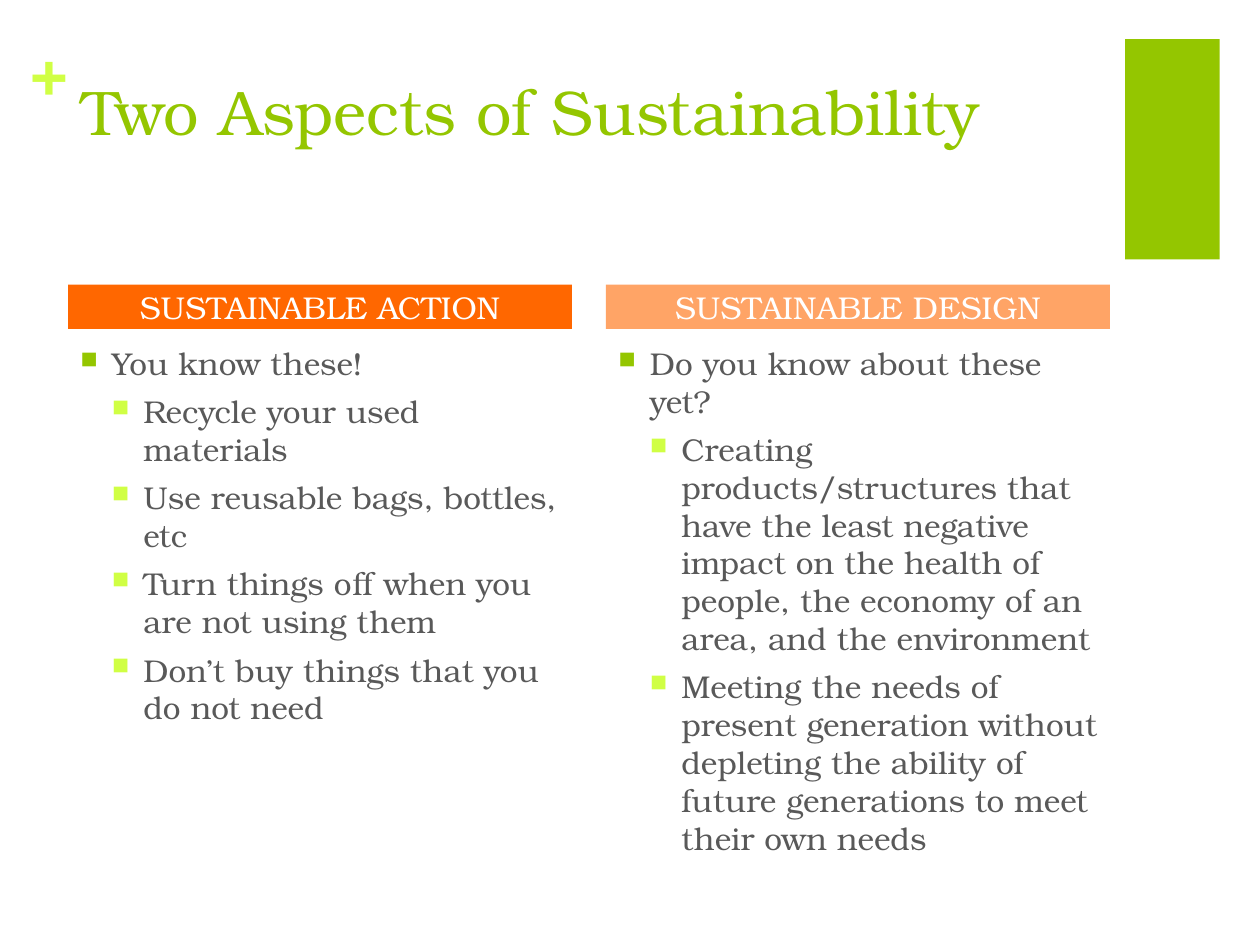
from dataclasses import dataclass

from lxml.etree import SubElement
from pptx import Presentation
from pptx.dml.color import RGBColor as RGB
from pptx.enum.shapes import MSO_SHAPE as Shape
from pptx.enum.text import MSO_ANCHOR as Anchor, PP_ALIGN as Align
from pptx.oxml.ns import qn
from pptx.util import Inches, Pt


@dataclass(frozen=True)
class Theme:
    """Font, colours and type sizes of the slide."""
    font: str = "TeX Gyre Bonum"
    green: str = "94C600"
    lime: str = "D0FF44"
    orange: str = "FF6700"
    peach: str = "FFA466"
    body: str = "595959"
    white: str = "FFFFFF"
    title_size: int = 36
    text_size: int = 18


THEME = Theme()
COLUMN_LEFT, COLUMN_STEP, COLUMN_WIDTH = 0.54, 4.27, 4
COLUMNS = [
    ("SUSTAINABLE ACTION", THEME.orange, "You know these!", [
        "Recycle your used materials",
        "Use reusable bags, bottles, etc",
        "Turn things off when you are not using them",
        "Don’t buy things that you do not need",
    ]),
    ("SUSTAINABLE DESIGN", THEME.peach, "Do you know about these yet?", [
        "Creating products/structures that have the least negative impact on "
        "the health of people, the economy of an area, and the environment",
        "Meeting the needs of present generation without depleting the "
        "ability of future generations to meet their own needs",
    ]),
]


def style(p, size, color, bold=False):
    """Format every run of a paragraph."""
    for r in p.runs:
        r.font.name = THEME.font
        r.font.size = Pt(size)
        r.font.bold = bold
        r.font.color.rgb = RGB.from_string(color)


def set_margins(tf, side, top):
    """Set the inner margins of a text frame in inches."""
    tf.margin_left = tf.margin_right = Inches(side)
    tf.margin_top = tf.margin_bottom = Inches(top)


def add_block(s, left, top, width, height, color):
    """Add a plain filled rectangle."""
    sp = s.shapes.add_shape(Shape.RECTANGLE, Inches(left), Inches(top),
                            Inches(width), Inches(height))
    sp.shadow.inherit = False
    sp.fill.solid()
    sp.fill.fore_color.rgb = RGB.from_string(color)
    sp.line.fill.background()
    return sp


def add_text(s, left, top, width, height, text):
    """Add a wrapping text box and return its text frame."""
    sp = s.shapes.add_textbox(Inches(left), Inches(top),
                              Inches(width), Inches(height))
    tf = sp.text_frame
    tf.word_wrap = True
    tf.text = text
    return tf


def add_header(s, left, text, color):
    """Add the coloured heading bar of a column."""
    tf = add_block(s, left, 2.26, COLUMN_WIDTH, 0.35, color).text_frame
    tf.word_wrap = True
    tf.vertical_anchor = Anchor.MIDDLE
    set_margins(tf, 0.1, 0)
    tf.text = text
    tf.paragraphs[0].alignment = Align.CENTER
    style(tf.paragraphs[0], THEME.text_size, THEME.white)


def set_bullet(p, level, color):
    """Give a paragraph a square bullet and a hanging indent."""
    p.level = level
    pPr = p._p.get_or_add_pPr()
    pPr.set("marL", str(Inches(0.25 * (level + 1))))
    pPr.set("indent", str(Inches(-0.25)))
    clr = SubElement(pPr, qn("a:buClr"))
    SubElement(clr, qn("a:srgbClr"), val=color)
    SubElement(pPr, qn("a:buSzPct"), val="75000")
    SubElement(pPr, qn("a:buChar"), char="■")


def add_list(s, left, lead, items):
    """Add a lead line with its second-level bullets."""
    tf = add_text(s, left, 2.68, COLUMN_WIDTH, 4.02, "\n".join([lead, *items]))
    for i, p in enumerate(tf.paragraphs):
        level, color, space = (1, THEME.lime, 6) if i else (0, THEME.green, 20)
        set_bullet(p, level, color)
        p.space_before = Pt(space)
        style(p, THEME.text_size, THEME.body)


def main():
    """Build the slide and save it."""
    prs = Presentation()
    prs.slide_width, prs.slide_height = Inches(10), Inches(7.5)
    s = prs.slides.add_slide(prs.slide_layouts[6])

    add_block(s, 8.93, 0.31, 0.75, 1.75, THEME.green)
    plus = add_text(s, 0.24, 0.25, 0.29, 0.61, "+")
    plus.word_wrap = False
    set_margins(plus, 0, 0)
    style(plus.paragraphs[0], THEME.title_size, THEME.lime, bold=True)
    title = add_text(s, 0.55, 0.53, 8.26, 1.22, "Two Aspects of Sustainability")
    style(title.paragraphs[0], THEME.title_size, THEME.green)

    for i, (heading, color, lead, items) in enumerate(COLUMNS):
        left = COLUMN_LEFT + i * COLUMN_STEP
        add_list(s, left, lead, items)
        add_header(s, left, heading, color)

    prs.save("out.pptx")


if __name__ == "__main__":
    main()
